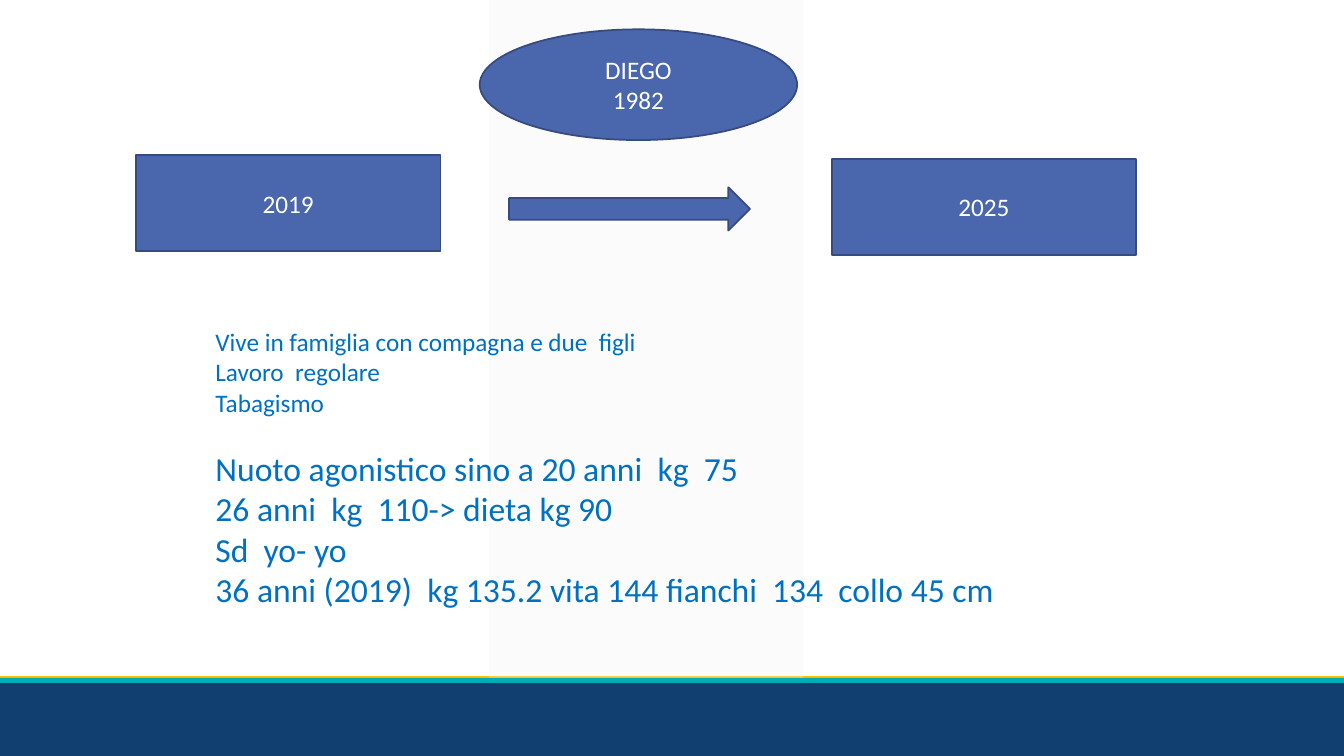
from dataclasses import dataclass

from lxml import etree
from pptx import Presentation
from pptx.dml.color import RGBColor
from pptx.enum.shapes import MSO_SHAPE
from pptx.enum.text import MSO_ANCHOR, PP_ALIGN
from pptx.oxml.ns import qn
from pptx.util import Cm, Pt

RECTANGLE = MSO_SHAPE.RECTANGLE
OVAL = MSO_SHAPE.OVAL
RIGHT_ARROW = MSO_SHAPE.RIGHT_ARROW
CENTER = PP_ALIGN.CENTER
LEFT = PP_ALIGN.LEFT
MIDDLE = MSO_ANCHOR.MIDDLE
TOP = MSO_ANCHOR.TOP


@dataclass(frozen=True)
class Theme:
    font: str = "Calibri"
    body_size: int = 18
    large_size: int = 24
    section_gap: int = 22
    line_width: float = 1.25
    white: str = "FFFFFF"
    text: str = "0070C0"
    box: str = "4A66AC"
    outline: str = "374B7F"
    panel: str = "F2F2F2"
    footer: str = "113F6F"
    yellow: str = "FFC000"
    teal: str = "00ACB6"


THEME = Theme()
SLIDE_WIDTH = 33.87
SLIDE_HEIGHT = 19.05
FOOTER_TOP = 17.15
STRIPE_HEIGHT = 0.13

HISTORY = [
    "Vive in famiglia con compagna e due  figli",
    "Lavoro  regolare",
    "Tabagismo",
]
WEIGHT = [
    "Nuoto agonistico sino a 20 anni  kg  75",
    "26 anni  kg  110-> dieta kg 90",
    "Sd  yo- yo",
    "36 anni (2019)  kg 135.2 vita 144 fianchi  134  collo 45 cm",
]


def write_text(frame, lines, size=THEME.body_size, color=THEME.text,
               align=LEFT, anchor=TOP, append=False, space_before=None):
    frame.word_wrap = True
    frame.vertical_anchor = anchor
    for index, line in enumerate(lines):
        first = index == 0
        paragraph = frame.paragraphs[0] if first and not append else frame.add_paragraph()
        paragraph.text = line
        paragraph.alignment = align
        paragraph.font.name = THEME.font
        paragraph.font.size = Pt(size)
        paragraph.font.color.rgb = RGBColor.from_string(color)
        if first and space_before:
            paragraph.space_before = Pt(space_before)


def add_block(slide, kind, left, top, width, height, fill, outline=None, opacity=None):
    shape = slide.shapes.add_shape(kind, Cm(left), Cm(top), Cm(width), Cm(height))
    shape.shadow.inherit = False
    shape.fill.solid()
    shape.fill.fore_color.rgb = RGBColor.from_string(fill)
    if opacity is not None:
        color = shape.fill._xPr.find(qn("a:solidFill"))[0]
        etree.SubElement(color, qn("a:alpha")).set("val", str(opacity * 1000))
    if outline:
        shape.line.color.rgb = RGBColor.from_string(outline)
        shape.line.width = Pt(THEME.line_width)
    else:
        shape.line.fill.background()
    return shape


def add_backdrop(slide, width, height, footer_top):
    add_block(slide, RECTANGLE, 0, footer_top - 0.11, width, STRIPE_HEIGHT, THEME.yellow)
    add_block(slide, RECTANGLE, 0, footer_top, width, height - footer_top, THEME.footer)
    add_block(slide, RECTANGLE, 12.32, 0, 7.92, footer_top, THEME.panel, opacity=30)
    add_block(slide, RECTANGLE, 0, footer_top - 0.07, width, STRIPE_HEIGHT, THEME.teal)


def add_timeline(slide, left, top):
    parts = [
        (RECTANGLE, 0, 3.17, 7.67, 2.41, ["2019"]),
        (RECTANGLE, 17.53, 3.27, 7.67, 2.41, ["2025"]),
        (RIGHT_ARROW, 9.4, 3.98, 6.07, 1.09, []),
        (OVAL, 8.66, 0, 8, 2.79, ["DIEGO", "1982"]),
    ]
    for kind, x, y, width, height, lines in parts:
        shape = add_block(slide, kind, left + x, top + y, width, height,
                          THEME.box, THEME.outline)
        write_text(shape.text_frame, lines, color=THEME.white, align=CENTER, anchor=MIDDLE)


def add_case_history(slide, left, top, width, height):
    box = slide.shapes.add_textbox(Cm(left), Cm(top), Cm(width), Cm(height))
    write_text(box.text_frame, HISTORY)
    write_text(box.text_frame, WEIGHT, size=THEME.large_size, append=True,
               space_before=THEME.section_gap)


def main():
    presentation = Presentation()
    presentation.slide_width = Cm(SLIDE_WIDTH)
    presentation.slide_height = Cm(SLIDE_HEIGHT)
    slide = presentation.slides.add_slide(presentation.slide_layouts[6])
    add_backdrop(slide, SLIDE_WIDTH, SLIDE_HEIGHT, FOOTER_TOP)
    add_timeline(slide, 3.43, 0.74)
    add_case_history(slide, 5.18, 8.1, 23.57, 7.44)
    presentation.save("out.pptx")


if __name__ == "__main__":
    main()
